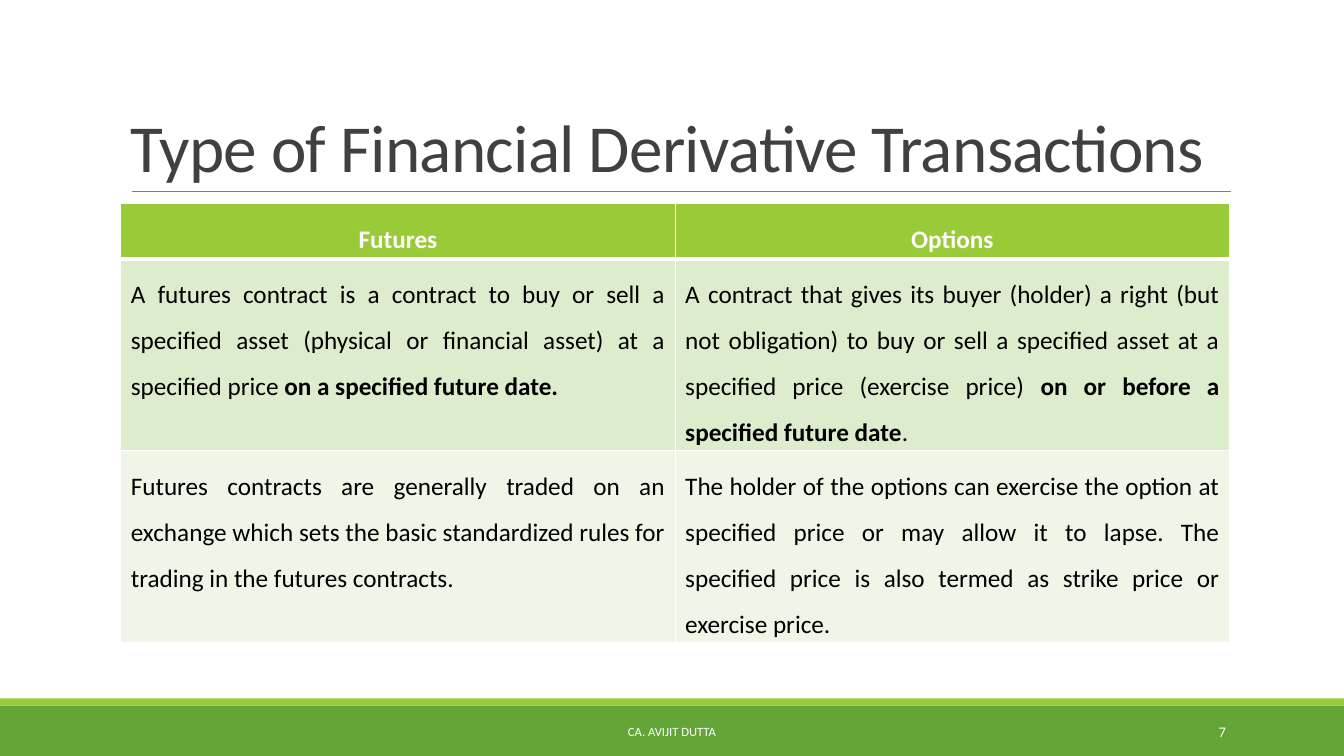
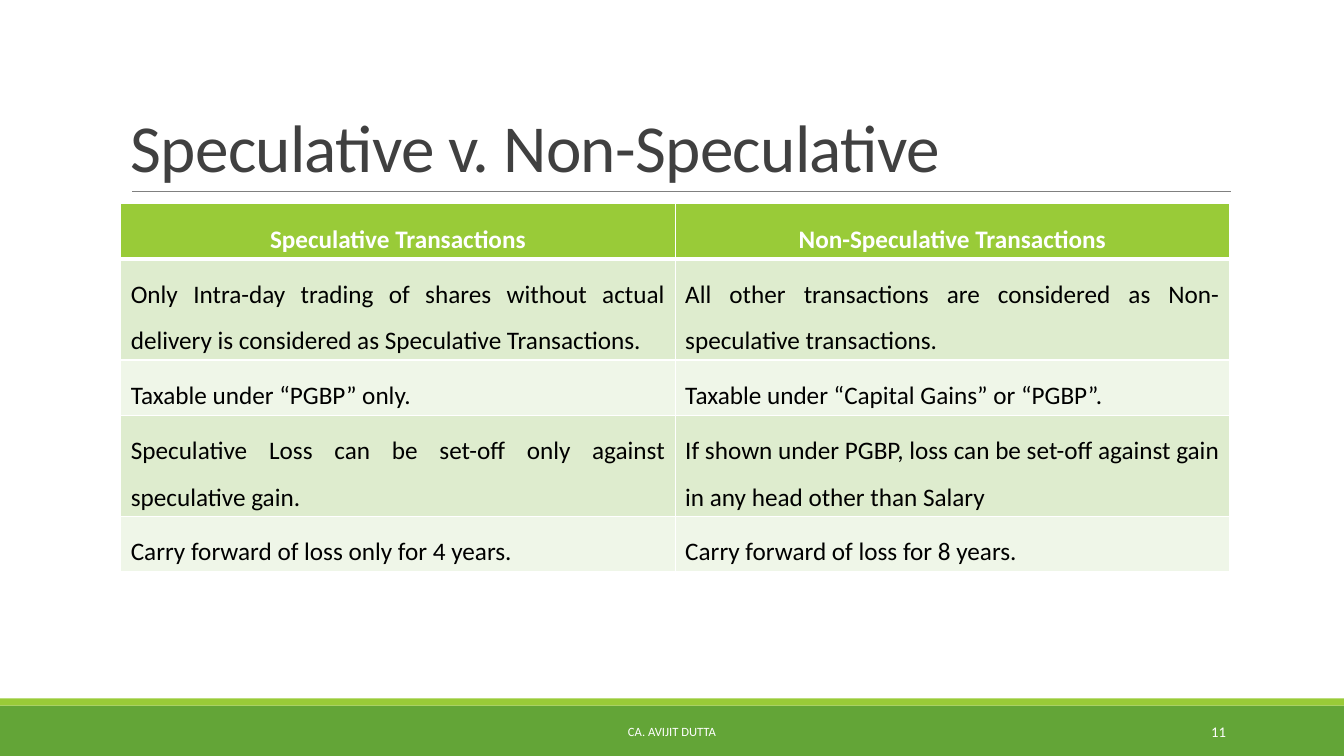
from dataclasses import dataclass

from lxml import etree
from pptx import Presentation
from pptx import util as u
from pptx.dml import color
from pptx.enum import shapes, text
from pptx.oxml import ns

EMU_PER_PX = 9525
PAGE_WIDTH, PAGE_HEIGHT = 1280, 720
FONT = "Calibri"
GREEN, LIME, GRAY, INK = "63A537", "99CB38", "808080", "404040"
WHITE, BLACK = "FFFFFF", "000000"
ROW_FILLS = ("DEECCE", "EFF6E8")
FOOTER = "CA. AVIJIT DUTTA"


@dataclass(frozen=True)
class Box:
    left: int
    top: int
    width: int
    height: int

    def emu(self) -> tuple[u.Emu, ...]:
        return tuple(px(n) for n in (self.left, self.top, self.width, self.height))


@dataclass(frozen=True)
class Style:
    size: float
    color: str
    align: text.PP_ALIGN
    anchor: text.MSO_ANCHOR = text.MSO_ANCHOR.TOP
    line_spacing: float = 1.0
    tracking: int = 0


@dataclass(frozen=True)
class Span:
    words: str
    bold: bool = False


@dataclass(frozen=True)
class Band:
    box: Box
    fill: str


@dataclass(frozen=True)
class Comparison:
    title: str
    number: int
    headings: tuple[str, str]
    rows: list[tuple[list[Span], list[Span]]]


BANDS = (
    Band(Box(0, 672, PAGE_WIDTH, 48), GREEN),
    Band(Box(0, 665, PAGE_WIDTH, 7), LIME),
)
TITLE_BOX = Box(115, 30, 1056, 152)
RULE_BOX = Box(126, 182, 1046, 0)
TABLE_BOX = Box(115, 194, 1056, 39)
FOOTER_BOX = Box(387, 678, 506, 38)
NUMBER_BOX = Box(1040, 678, 137, 38)

TITLE = Style(48, INK, text.PP_ALIGN.LEFT, text.MSO_ANCHOR.BOTTOM, 0.85, -50)
HEADING = Style(18, WHITE, text.PP_ALIGN.CENTER, line_spacing=1.5)
BODY = Style(18, BLACK, text.PP_ALIGN.JUSTIFY, line_spacing=1.5)
FOOTER_STYLE = Style(9, WHITE, text.PP_ALIGN.CENTER, text.MSO_ANCHOR.MIDDLE)
NUMBER_STYLE = Style(10.5, WHITE, text.PP_ALIGN.RIGHT, text.MSO_ANCHOR.MIDDLE)

COMPARISONS = (
    Comparison(
        "Type of Financial Derivative Transactions",
        7,
        ("Futures", "Options"),
        [
            (
                [
                    Span("A futures contract is a contract to buy or sell a specified asset "
                         "(physical or financial asset) at a specified price "),
                    Span("on a specified future date.", True),
                ],
                [
                    Span("A contract that gives its buyer (holder) a right (but not obligation) "
                         "to buy or sell a specified asset at a specified price (exercise price) "),
                    Span("on or before a specified future date", True),
                    Span("."),
                ],
            ),
            (
                [Span("Futures contracts are generally traded on an exchange which sets the "
                      "basic standardized rules for trading in the futures contracts.")],
                [Span("The holder of the options can exercise the option at specified price or "
                      "may allow it to lapse. The specified price is also termed as strike "
                      "price or exercise price.")],
            ),
        ],
    ),
    Comparison(
        "Speculative v. Non-Speculative",
        11,
        ("Speculative Transactions", "Non-Speculative Transactions"),
        [
            (
                [Span("Only Intra-day trading of shares without actual delivery is considered "
                      "as Speculative Transactions.")],
                [Span("All other transactions are considered as Non-speculative transactions.")],
            ),
            (
                [Span("Taxable under “PGBP” only.")],
                [Span("Taxable under “Capital Gains” or “PGBP”.")],
            ),
            (
                [Span("Speculative Loss can be set-off only against speculative gain.")],
                [Span("If shown under PGBP, loss can be set-off against gain in any head other "
                      "than Salary")],
            ),
            (
                [Span("Carry forward of loss only for 4 years.")],
                [Span("Carry forward of loss for 8 years.")],
            ),
        ],
    ),
)


def px(length: int) -> u.Emu:
    return u.Emu(length * EMU_PER_PX)


def rgb(value: str) -> color.RGBColor:
    return color.RGBColor.from_string(value)


def write(frame, spans: list[Span], style: Style) -> None:
    frame.word_wrap = True
    para = frame.paragraphs[0]
    para.alignment = style.align
    para.line_spacing = style.line_spacing
    for span in spans:
        run = para.add_run()
        run.text = span.words
        run.font.name = FONT
        run.font.size = u.Pt(style.size)
        run.font.bold = span.bold
        run.font.color.rgb = rgb(style.color)
        if style.tracking:
            run.font._element.set("spc", str(style.tracking))


def add_text(page, box: Box, words: str, style: Style) -> None:
    frame = page.shapes.add_textbox(*box.emu()).text_frame
    frame.vertical_anchor = style.anchor
    write(frame, [Span(words)], style)


def add_band(page, band: Band) -> None:
    shape = page.shapes.add_shape(shapes.MSO_SHAPE.RECTANGLE, *band.box.emu())
    shape.shadow.inherit = False
    shape.fill.solid()
    shape.fill.fore_color.rgb = rgb(band.fill)
    shape.line.fill.background()


def add_rule(page, box: Box) -> None:
    left, top, width, height = box.emu()
    rule = page.shapes.add_connector(
        shapes.MSO_CONNECTOR.STRAIGHT, left, top, left + width, top + height
    )
    rule.line.color.rgb = rgb(GRAY)
    rule.line.width = u.Pt(0.5)
    etree.SubElement(rule._element.spPr, ns.qn("a:effectLst"))


def set_borders(cell, top: float, bottom: float) -> None:
    properties = cell._tc.get_or_add_tcPr()
    for side, width in (("L", 1), ("R", 1), ("T", top), ("B", bottom)):
        line = etree.SubElement(properties, ns.qn(f"a:ln{side}"), w=str(u.Pt(width)))
        fill = etree.SubElement(line, ns.qn("a:solidFill"))
        etree.SubElement(fill, ns.qn("a:srgbClr"), val=WHITE)


def fill_cell(cell, spans: list[Span], style: Style, fill: str, top: float, bottom: float) -> None:
    set_borders(cell, top, bottom)
    cell.fill.solid()
    cell.fill.fore_color.rgb = rgb(fill)
    write(cell.text_frame, spans, style)


def add_comparison_table(page, comparison: Comparison) -> None:
    row_count = len(comparison.rows) + 1
    left, top, width, row_height = TABLE_BOX.emu()
    table = page.shapes.add_table(
        row_count, len(comparison.headings), left, top, width, row_height * row_count
    ).table
    for column, heading in enumerate(comparison.headings):
        fill_cell(table.cell(0, column), [Span(heading, True)], HEADING, LIME, 1, 3)
    for index, row in enumerate(comparison.rows):
        fill = ROW_FILLS[index % len(ROW_FILLS)]
        top_width = 3 if index == 0 else 1
        for column, spans in enumerate(row):
            fill_cell(table.cell(index + 1, column), spans, BODY, fill, top_width, 1)


def add_page(deck, comparison: Comparison) -> None:
    page = deck.slides.add_slide(deck.slide_layouts[6])
    for band in BANDS:
        add_band(page, band)
    add_rule(page, RULE_BOX)
    add_text(page, TITLE_BOX, comparison.title, TITLE)
    add_comparison_table(page, comparison)
    add_text(page, FOOTER_BOX, FOOTER, FOOTER_STYLE)
    add_text(page, NUMBER_BOX, str(comparison.number), NUMBER_STYLE)


def main() -> None:
    deck = Presentation()
    deck.slide_width, deck.slide_height = px(PAGE_WIDTH), px(PAGE_HEIGHT)
    for comparison in COMPARISONS:
        add_page(deck, comparison)
    deck.save("out.pptx")


if __name__ == "__main__":
    main()
